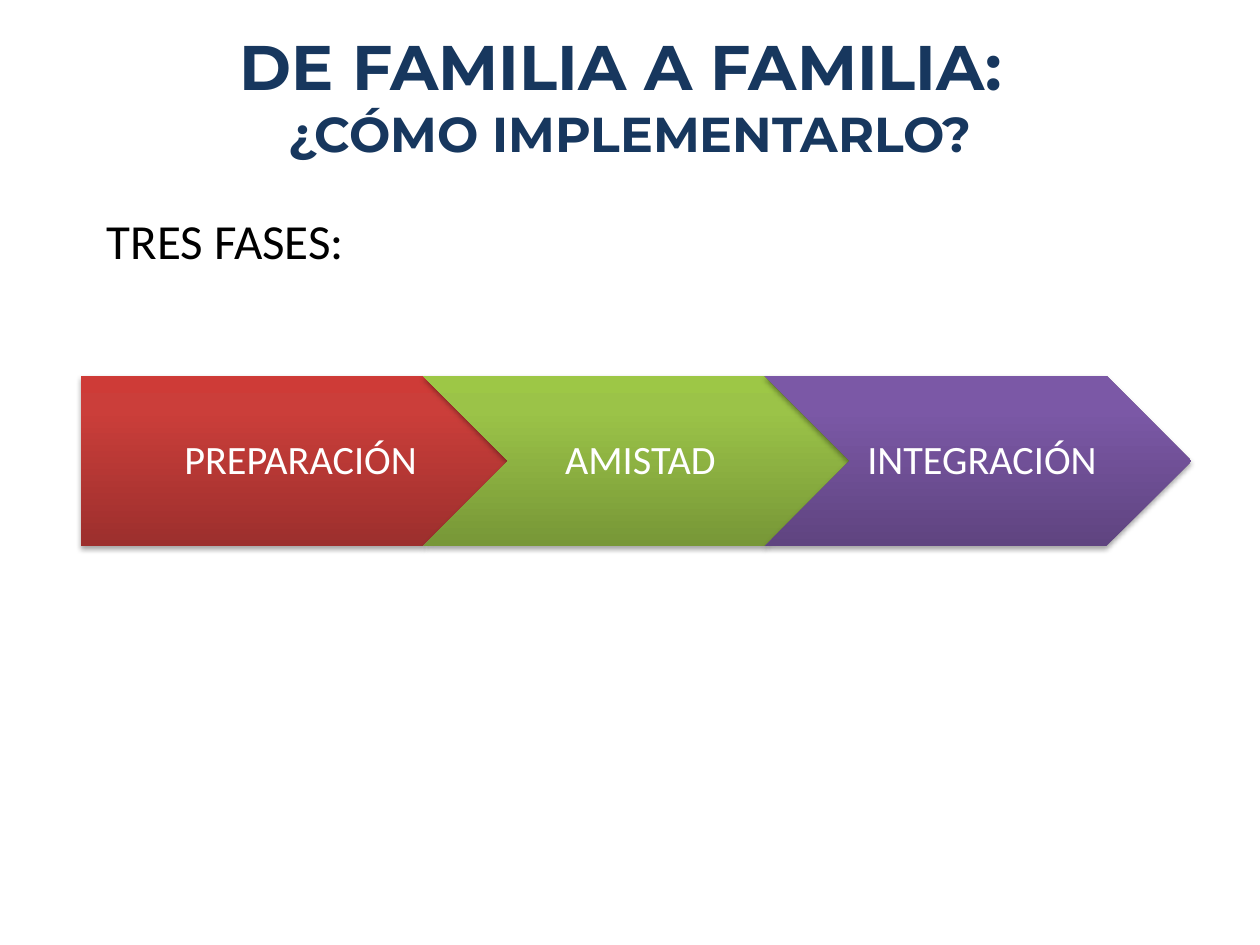
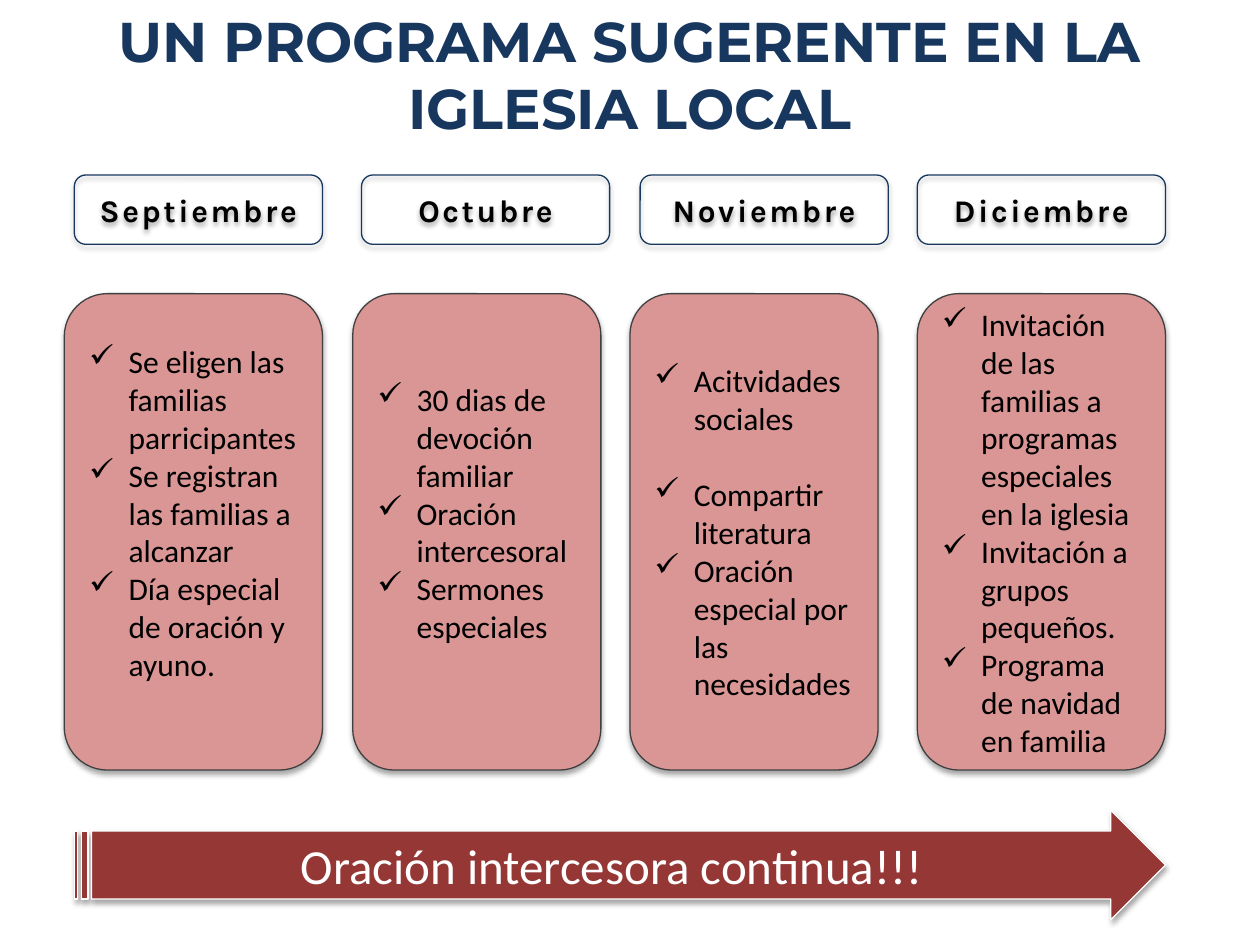
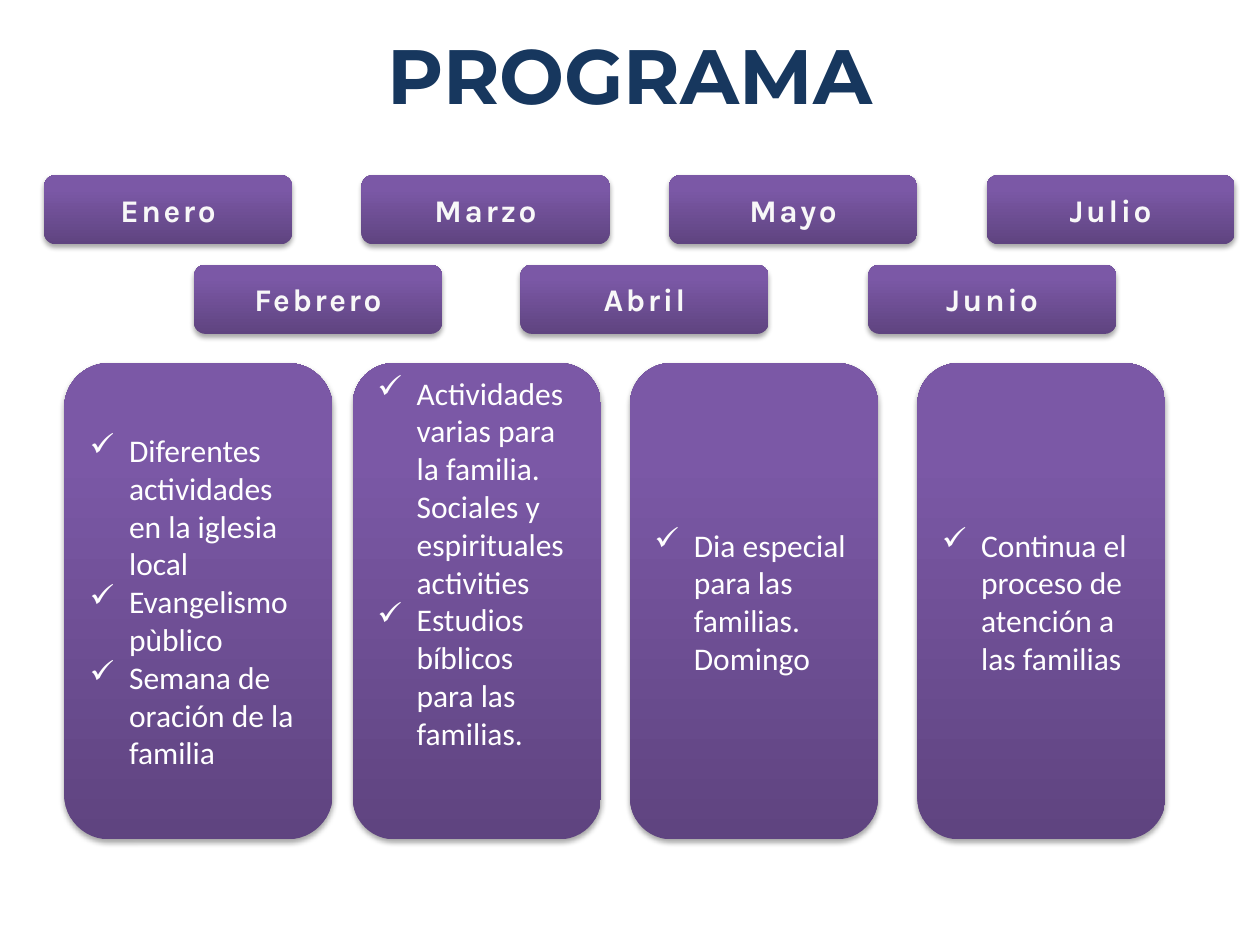
from dataclasses import dataclass
from typing import NamedTuple, Optional, Union

from pptx import Presentation
from pptx.dml.color import RGBColor
from pptx.enum import shapes, text
from pptx.oxml import parse_xml
from pptx.oxml.ns import nsdecls, qn
from pptx.util import Pt


class Gradient(NamedTuple):
    """Colours from the bottom edge upwards."""
    bottom: str
    middle: str
    top: str


class Box(NamedTuple):
    left: float
    top: float
    width: float
    height: float


@dataclass(frozen=True)
class TextStyle:
    font: str
    size: float
    color: str
    bold: bool = False
    tracking: float = 0
    align: text.PP_ALIGN = text.PP_ALIGN.CENTER


@dataclass(frozen=True)
class Theme:
    navy: str = "17375E"
    glow: str = "FCFCFD"
    black: str = "000000"
    white: str = "FFFFFF"
    pale: str = "F8F8F8"
    pink: str = "D99694"
    maroon: str = "953735"
    gray: str = "404040"
    red: Gradient = Gradient("9C2F2D", "CB3E3A", "CE3B37")
    green: Gradient = Gradient("779737", "9BC348", "9DC746")
    purple: Gradient = Gradient("5F4480", "7B58A6", "7C57A8")
    heading: str = "Montserrat"
    body: str = "Calibri"
    label: str = "Karla"
    body_size: float = 18
    phase_size: float = 23
    lead_size: float = 28
    line_height: float = 22
    hairline: float = 0.75


THEME = Theme()


@dataclass(frozen=True)
class Look:
    """Surface of a shape: fill, outline and the colour of its text."""
    fill: Union[str, Gradient, None]
    line: Optional[str]
    ink: str


@dataclass(frozen=True)
class Card:
    left: float
    items: tuple
    width: float = 141.8
    lines_below: int = 0
    gap_before: Optional[int] = None


class Month(NamedTuple):
    name: str
    left: float


class Phase(NamedTuple):
    name: str
    outline: shapes.MSO_SHAPE
    fill: Gradient
    left_inset: float


PLAIN_MONTH = Look(None, THEME.navy, THEME.black)
PURPLE_MONTH = Look(THEME.purple, None, THEME.pale)
PINK_CARD = Look(THEME.pink, THEME.gray, THEME.black)
PURPLE_CARD = Look(THEME.purple, None, THEME.white)

PHASES = (
    Phase("PREPARACIÓN", shapes.MSO_SHAPE.PENTAGON, THEME.red, 33.8),
    Phase("AMISTAD", shapes.MSO_SHAPE.CHEVRON, THEME.green, 7),
    Phase("INTEGRACIÓN", shapes.MSO_SHAPE.CHEVRON, THEME.purple, 7),
)

UPPER_ROW, LOWER_ROW = 100, 151.2
AUTUMN_MONTHS = (Month("Septiembre", 42.5), Month("Octubre", 206.6),
                 Month("Noviembre", 365.8), Month("Diciembre", 524.2))
ODD_MONTHS = (Month("Enero", 25.2), Month("Marzo", 206.6),
              Month("Mayo", 382.3), Month("Julio", 563.8))
EVEN_MONTHS = (Month("Febrero", 110.9), Month("Abril", 297.4),
               Month("Junio", 496.1))

CARD_LEFTS = (36.7, 201.6, 360, 524.2)
AUTUMN_CARDS = (
    Card(CARD_LEFTS[0], ("Se eligen las familias parricipantes",
                         "Se registran las familias a alcanzar",
                         "Día especial de oración y ayuno."),
         width=147.6, lines_below=1),
    Card(CARD_LEFTS[1], ("30 dias de devoción familiar",
                         "Oración intercesoral",
                         "Sermones especiales"), lines_below=1),
    Card(CARD_LEFTS[2], ("Acitvidades sociales",
                         "Compartir literatura",
                         "Oración especial por las necesidades"), gap_before=1),
    Card(CARD_LEFTS[3], ("Invitación de las familias a programas especiales en la iglesia",
                         "Invitación a grupos pequeños.",
                         "Programa de navidad en familia")),
)
YEAR_CARDS = (
    Card(CARD_LEFTS[0], ("Diferentes actividades en la iglesia local",
                         "Evangelismo pùblico",
                         "Semana de oración de la familia"), width=153.4),
    Card(CARD_LEFTS[1], ("Actividades varias para la familia. Sociales y espirituales activities",
                         "Estudios bíblicos para las familias."), lines_below=2),
    Card(CARD_LEFTS[2], ("Dia especial para las familias. Domingo",)),
    Card(CARD_LEFTS[3], ("Continua el proceso de atención a las familias",)),
)


def rgb(color: str) -> RGBColor:
    return RGBColor.from_string(color)


def apply_style(paragraph, style: TextStyle) -> None:
    paragraph.alignment = style.align
    for run in paragraph.runs:
        font = run.font
        font.name, font.size, font.bold = style.font, Pt(style.size), style.bold
        font.color.rgb = rgb(style.color)
        if style.tracking:
            font._element.set("spc", str(round(style.tracking * 100)))


def fill_gradient(shape, gradient: Gradient) -> None:
    stops = "".join(
        f'<a:gs pos="{pos}"><a:srgbClr val="{color}"/></a:gs>'
        for pos, color in zip((0, 80000, 100000), gradient))
    shape.fill.gradient()
    properties = shape._element.spPr
    properties.replace(properties.find(qn("a:gradFill")), parse_xml(
        f'<a:gradFill {nsdecls("a")} rotWithShape="1"><a:gsLst>{stops}</a:gsLst>'
        '<a:lin ang="16200000" scaled="0"/></a:gradFill>'))


def add_soft_shadow(shape) -> None:
    shape.shadow.inherit = False
    shape._element.spPr.find(qn("a:effectLst")).append(parse_xml(
        f'<a:outerShdw {nsdecls("a")} blurRad="{Pt(3.1)}" dist="{Pt(1.8)}" '
        'dir="5400000" rotWithShape="0"><a:srgbClr val="000000">'
        '<a:alpha val="35000"/></a:srgbClr></a:outerShdw>'))


def add_panel(slide, outline, box: Box, look: Look, content: str, style: TextStyle):
    """Shadowed shape with its text centred vertically."""
    panel = slide.shapes.add_shape(outline, *map(Pt, box))
    if look.fill is None:
        panel.fill.background()
    elif isinstance(look.fill, Gradient):
        fill_gradient(panel, look.fill)
    else:
        panel.fill.solid()
        panel.fill.fore_color.rgb = rgb(look.fill)
    if look.line:
        panel.line.color.rgb = rgb(look.line)
        panel.line.width = Pt(THEME.hairline)
    else:
        panel.line.fill.background()
    add_soft_shadow(panel)
    frame = panel.text_frame
    frame.word_wrap = True
    frame.vertical_anchor = text.MSO_ANCHOR.MIDDLE
    frame.text = content
    for paragraph in frame.paragraphs:
        apply_style(paragraph, style)
    return panel


def add_title(slide, top: float, height: float, *lines: tuple) -> None:
    """Full-width title; each line is a pair of wording and size."""
    title = slide.shapes.add_textbox(0, Pt(top), Pt(720), Pt(height))
    frame = title.text_frame
    frame.word_wrap = True
    frame.text = "\n".join(wording for wording, _ in lines)
    for paragraph, (_, size) in zip(frame.paragraphs, lines):
        apply_style(paragraph, TextStyle(THEME.heading, size, THEME.navy, bold=True))
        for run in paragraph.runs:
            run.font._element.insert(0, parse_xml(
                f'<a:ln {nsdecls("a")} w="{Pt(1.4)}"><a:solidFill>'
                f'<a:srgbClr val="{THEME.glow}"/></a:solidFill></a:ln>'))


def add_months(slide, months: tuple, top: float, look: Look) -> None:
    style = TextStyle(THEME.label, THEME.body_size, look.ink, bold=True, tracking=1.5)
    for month in months:
        add_panel(slide, shapes.MSO_SHAPE.ROUNDED_RECTANGLE,
                  Box(month.left, top, 141.8, 39.6), look, month.name, style)


def add_check_bullet(paragraph) -> None:
    properties = paragraph._p.get_or_add_pPr()
    properties.set("marL", str(Pt(22.5)))
    properties.set("indent", str(Pt(-22.5)))
    properties.append(parse_xml(f'<a:buChar {nsdecls("a")} char="✓"/>'))


def add_cards(slide, cards: tuple, top: float, look: Look) -> None:
    style = TextStyle(THEME.body, THEME.body_size, look.ink, align=text.PP_ALIGN.LEFT)
    for card in cards:
        panel = add_panel(slide, shapes.MSO_SHAPE.ROUNDED_RECTANGLE,
                          Box(card.left, top, card.width, 272.2), look,
                          "\n".join(card.items), style)
        frame = panel.text_frame
        frame.margin_bottom = Pt(3.6 + card.lines_below * THEME.line_height)
        for index, paragraph in enumerate(frame.paragraphs):
            add_check_bullet(paragraph)
            if index == card.gap_before:
                paragraph.space_before = Pt(THEME.line_height)


def build_phases(slide) -> None:
    add_title(slide, 12.2, 116, ("DE FAMILIA A FAMILIA: ", 36),
              ("¿CÓMO IMPLEMENTARLO?", 28))
    lead = slide.shapes.add_textbox(Pt(54), Pt(116.6), Pt(226.8), Pt(41))
    lead.text_frame.word_wrap = True
    lead.text_frame.auto_size = text.MSO_AUTO_SIZE.SHAPE_TO_FIT_TEXT
    lead.text_frame.text = "TRES FASES:"
    apply_style(lead.text_frame.paragraphs[0],
                TextStyle(THEME.body, THEME.lead_size, THEME.black,
                          align=text.PP_ALIGN.LEFT))
    style = TextStyle(THEME.body, THEME.phase_size, THEME.white)
    for index, phase in enumerate(PHASES):
        step = add_panel(slide, phase.outline,
                         Box(46.2 + index * 195.3, 214.6, 244, 97.6),
                         Look(phase.fill, None, THEME.white), phase.name, style)
        frame = step.text_frame
        frame.margin_left, frame.margin_right = Pt(phase.left_inset), Pt(2)
        frame.margin_top = frame.margin_bottom = Pt(5)
        frame.paragraphs[0].line_spacing = 0.9


def build_autumn(slide) -> None:
    add_title(slide, 0, 72.7, ("UN PROGRAMA SUGERENTE EN LA IGLESIA LOCAL", 32))
    add_cards(slide, AUTUMN_CARDS, 167.8, PINK_CARD)
    add_months(slide, AUTUMN_MONTHS, UPPER_ROW, PLAIN_MONTH)
    prayer = add_panel(slide, shapes.MSO_SHAPE.STRIPED_RIGHT_ARROW,
                       Box(42.5, 463, 623.5, 62.6),
                       Look(THEME.maroon, THEME.white, THEME.white),
                       "Oración intercesora continua!!!",
                       TextStyle(THEME.body, THEME.lead_size, THEME.white))
    prayer.adjustments[0] = 0.62
    prayer.adjustments[1] = 0.5


def build_year(slide) -> None:
    add_title(slide, 12.2, 72.7, ("PROGRAMA", 44))
    add_cards(slide, YEAR_CARDS, 207.4, PURPLE_CARD)
    add_months(slide, ODD_MONTHS, UPPER_ROW, PURPLE_MONTH)
    add_months(slide, EVEN_MONTHS, LOWER_ROW, PURPLE_MONTH)


def main() -> None:
    deck = Presentation()
    deck.slide_width, deck.slide_height = Pt(720), Pt(540)
    blank = deck.slide_layouts[6]
    for build in (build_phases, build_autumn, build_year):
        build(deck.slides.add_slide(blank))
    deck.save("out.pptx")


if __name__ == "__main__":
    main()
